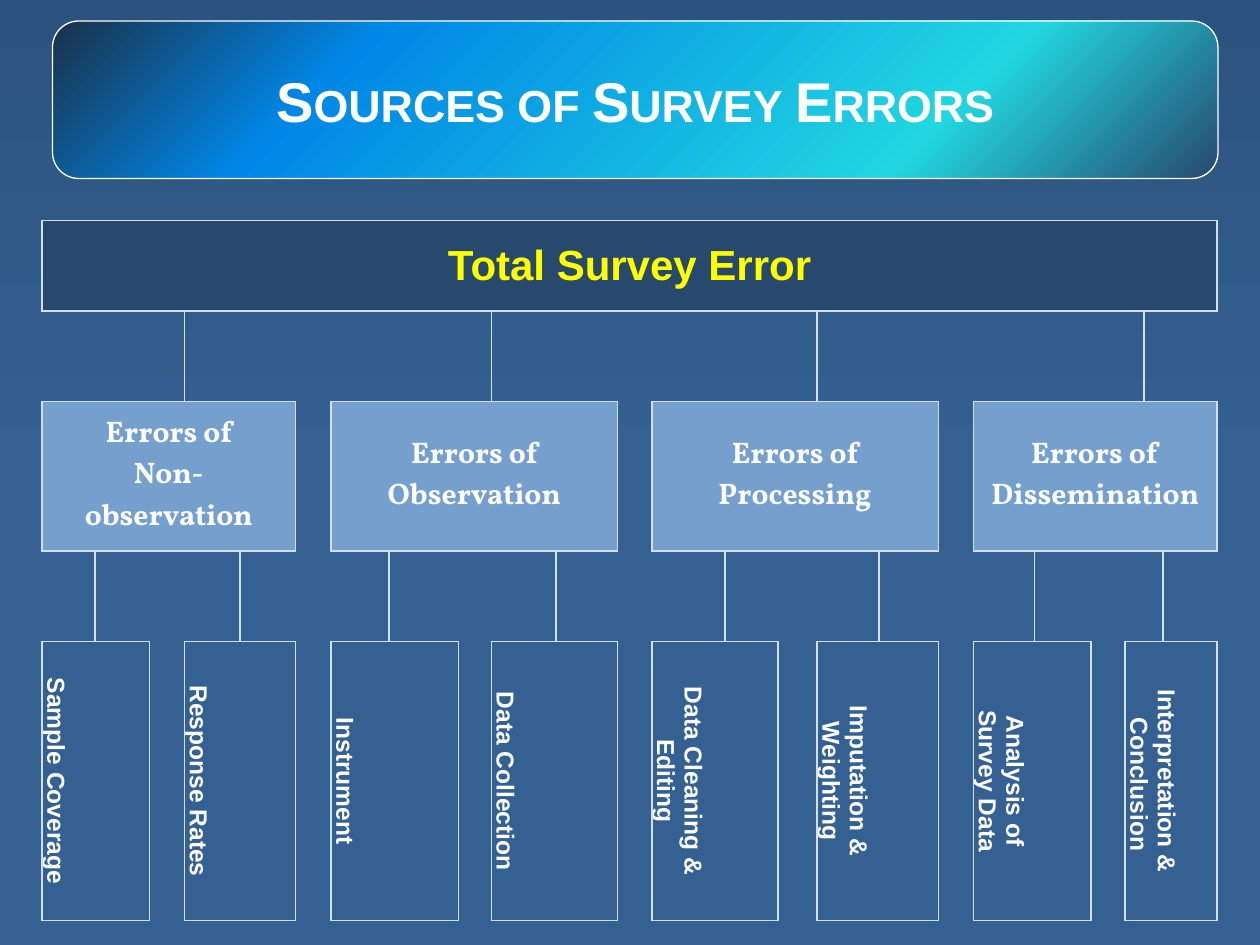
from dataclasses import dataclass

from lxml import etree
from pptx import Presentation
from pptx.dml.color import RGBColor
from pptx.enum.shapes import MSO_SHAPE as Shape
from pptx.enum.text import MSO_ANCHOR as Anchor, PP_ALIGN as Align
from pptx.oxml import parse_xml
from pptx.oxml.ns import nsdecls, qn
from pptx.util import Inches, Pt


@dataclass(frozen=True)
class Theme:
    sans: str = "Arial"
    serif: str = "Vollkorn"
    white: str = "FFFFFF"
    yellow: str = "FFFF00"
    rule: str = "D1DFEF"
    root: str = "27496D"
    branch: str = "75A0CE"
    leaf: str = "346192"
    backdrop: tuple = ((0, "2C537D"), (50, "346192"))
    banner: tuple = ((0, "27496D"), (25, "21D6E0"), (75, "0087E6"), (100, "1A3049"))
    title_size: int = 32
    root_size: int = 24
    branch_size: int = 17
    leaf_size: int = 14


@dataclass(frozen=True)
class Box:
    x: int
    y: int
    w: int
    h: int

    def inner(self, x, y, w, h):
        return Box(int(self.x + self.w * x), int(self.y + self.h * y),
                   int(self.w * w), int(self.h * h))

    @property
    def frame(self):
        return self.x, self.y, self.w, self.h


T = Theme()
COLS = [42, 43, 28, 44, 44, 28, 46, 55, 26, 51, 49, 27,
        58, 42, 31, 49, 47, 28, 48, 45, 27, 15, 15, 43]
ROWS = [72, 72, 119, 72, 191]
GROUP = 6
LAST = len(COLS)
ROOT = "Total Survey Error"
BRANCHES = [
    ("Errors of\vNon-observation", "Sample Coverage", "Response Rates"),
    ("Errors of\vObservation", "Instrument", "Data Collection"),
    ("Errors of\vProcessing", "Data Cleaning & Editing", "Imputation &\nWeighting"),
    ("Errors of Dissemination", "Analysis of\nSurvey Data",
     "Interpretation &\n Conclusion"),
]


def paint_gradient(fill, parent, stops, direction):
    fill.solid()
    gs = "".join(f'<a:gs pos="{pos * 1000}"><a:srgbClr val="{color}"/></a:gs>'
                 for pos, color in stops)
    grad = parse_xml(f'<a:gradFill {nsdecls("a")} rotWithShape="1">'
                     f'<a:gsLst>{gs}</a:gsLst>{direction}</a:gradFill>')
    parent.replace(parent.find(qn("a:solidFill")), grad)


def write(tf, text, font, size, color):
    tf.text = text
    for p in tf.paragraphs:
        p.alignment = Align.CENTER
        for r in p.runs:
            r.font.name, r.font.size, r.font.bold = font, Pt(size), True
            r.font.color.rgb = RGBColor.from_string(color)


def draw_backdrop(s):
    fill = s.background.fill
    parent = s._element.find(".//" + qn("p:bgPr"))
    paint_gradient(fill, parent, T.backdrop, '<a:lin ang="5400000" scaled="0"/>')


def draw_banner(s, box):
    sp = s.shapes.add_shape(Shape.ROUNDED_RECTANGLE, *box.frame)
    sp.shadow.inherit = False
    paint_gradient(sp.fill, sp._element.spPr, T.banner,
                   '<a:path path="circle"><a:fillToRect l="100000" t="100000"/>'
                   '</a:path><a:tileRect r="-100000" b="-100000"/>')
    sp.line.color.rgb = RGBColor.from_string(T.white)
    sp.line.width = Pt(0.75)
    tf = s.shapes.add_textbox(*box.inner(0.01, 0.13, 0.98, 0.74).frame).text_frame
    tf.word_wrap = True
    tf.vertical_anchor = Anchor.MIDDLE
    write(tf, "Sources of Survey Errors", T.sans, T.title_size, T.white)
    tf.paragraphs[0].runs[0]._r.get_or_add_rPr().set("cap", "small")


def set_borders(cell, sides):
    tcPr = cell._tc.get_or_add_tcPr()
    for side in "LRTB":
        ln = etree.SubElement(tcPr, qn(f"a:ln{side}"), w=str(Pt(1)))
        if side in sides:
            fill = etree.SubElement(ln, qn("a:solidFill"))
            etree.SubElement(fill, qn("a:srgbClr"), val=T.rule)
        else:
            etree.SubElement(ln, qn("a:noFill"))


def add_span(tbl, row, start, end, sides, color=None):
    cells = [tbl.cell(row, col) for col in range(start, end)]
    for cell in cells:
        set_borders(cell, sides)
        if color:
            cell.fill.solid()
            cell.fill.fore_color.rgb = RGBColor.from_string(color)
        else:
            cell.fill.background()
    if len(cells) > 1:
        cells[0].merge(cells[-1])
    return cells[0]


def add_node(tbl, row, start, end, text, fill, font, size, color=T.white):
    cell = add_span(tbl, row, start, end, "LRTB", fill)
    cell.vertical_anchor = Anchor.MIDDLE
    cell.margin_left = cell.margin_right = Inches(0.07)
    cell.margin_top = cell.margin_bottom = 0
    write(cell.text_frame, text, font, size, color)
    return cell


def add_branch(tbl, start, end, name, leaves):
    final = end == LAST
    top_stem = start + (4 if final else 3)
    second = start + 3
    second_stem = end - 1
    add_span(tbl, 1, start, top_stem, "TRB")
    add_span(tbl, 1, top_stem, end, "LTB")
    add_node(tbl, 2, start, end, name, T.branch, T.serif, T.branch_size)
    add_span(tbl, 3, start, start + 1, "TRB")
    add_span(tbl, 3, start + 1, start + 2, "LTB")
    add_span(tbl, 3, start + 2, second, "T")
    add_span(tbl, 3, second, second_stem, "TRB")
    add_span(tbl, 3, second_stem, end, "LTB")
    add_span(tbl, 4, start + 2, second, "LR")
    for (a, b), text in zip(((start, start + 2), (second, end)), leaves):
        cell = add_node(tbl, 4, a, b, text, T.leaf, T.sans, T.leaf_size)
        cell._tc.get_or_add_tcPr().set("vert", "vert")
    if not final:
        for row, sides in ((1, "T"), (2, "LR"), (3, ""), (4, "LR")):
            add_span(tbl, row, end, end + 1, sides)


def draw_error_tree(s, box):
    tbl = s.shapes.add_table(len(ROWS), LAST, *box.frame).table
    tbl.first_row = tbl.horz_banding = False
    for col, share in zip(tbl.columns, COLS):
        col.width = int(box.w * share / sum(COLS))
    for row, share in zip(tbl.rows, ROWS):
        row.height = int(box.h * share / sum(ROWS))
    add_node(tbl, 0, 0, LAST, ROOT, T.root, T.sans, T.root_size, T.yellow)
    for i, (name, *leaves) in enumerate(BRANCHES):
        start = i * GROUP
        end = LAST if i == len(BRANCHES) - 1 else start + GROUP - 1
        add_branch(tbl, start, end, name, leaves)


def main():
    prs = Presentation()
    prs.slide_width, prs.slide_height = Inches(10), Inches(7.5)
    s = prs.slides.add_slide(prs.slide_layouts[6])
    page = Box(0, 0, prs.slide_width, prs.slide_height)
    draw_backdrop(s)
    draw_banner(s, page.inner(1 / 24, 1 / 45, 0.925, 1 / 6))
    draw_error_tree(s, page.inner(1 / 30, 7 / 30, 14 / 15, 0.7))
    prs.save("out.pptx")


if __name__ == "__main__":
    main()
